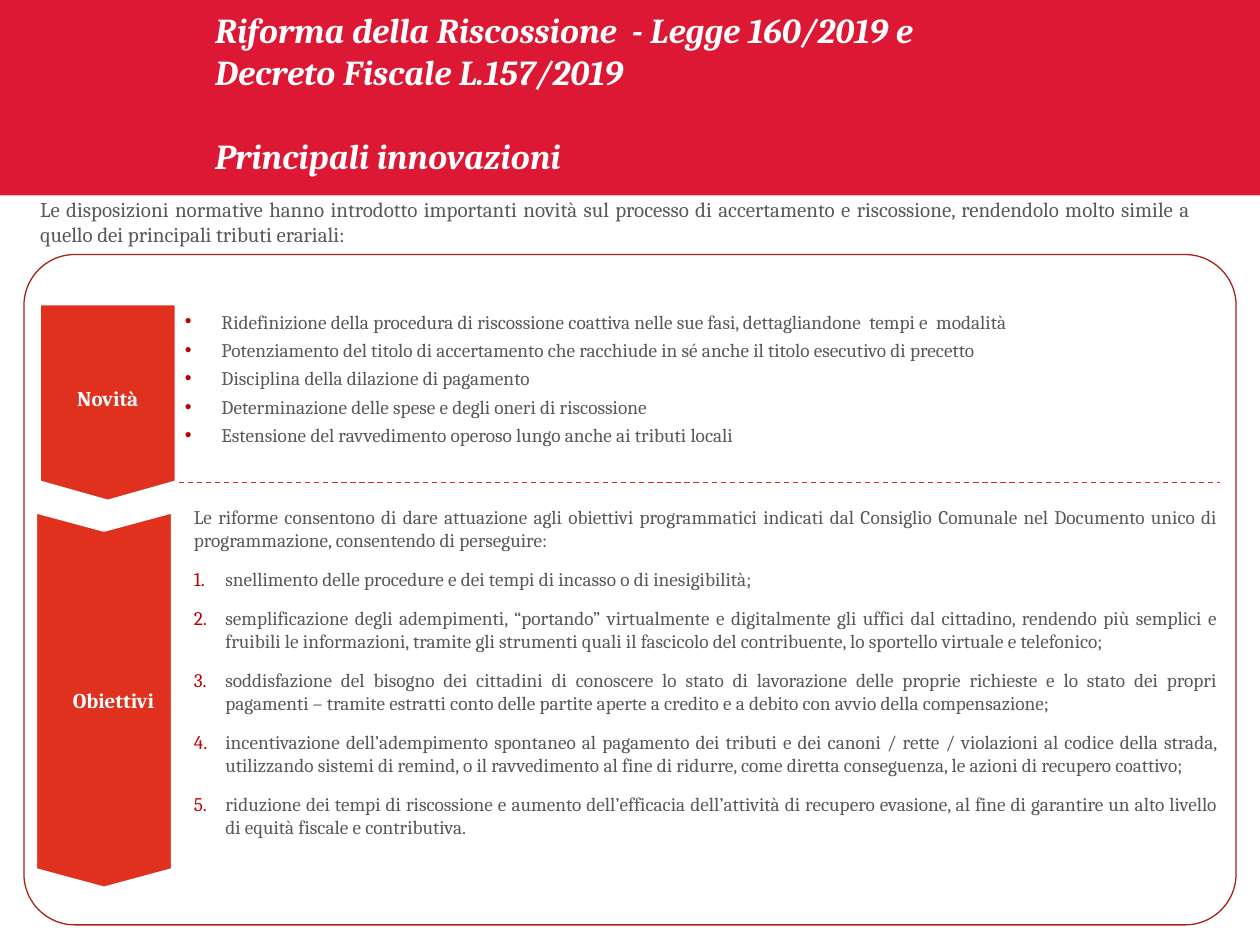
from pptx import Presentation
from pptx.dml.color import RGBColor
from pptx.enum import dml, shapes, text
from pptx.util import Inches, Pt
from lxml import etree

COLORS = {"banner": "DD1835", "arrow": "E0301E", "frame": "A62416", "divider": "E02B19",
          "marker": "C00000", "body": "595959", "white": "FFFFFF"}
FONT = "Cambria"
NS = "http://schemas.openxmlformats.org/drawingml/2006/main"
SHAPE = shapes.MSO_SHAPE
ALIGN = text.PP_ALIGN
ANCHOR = text.MSO_ANCHOR

TITLE = ["Riforma della Riscossione  - Legge 160/2019 e Decreto Fiscale L.157/2019",
         "Principali innovazioni"]
INTRO = ("Le disposizioni normative hanno introdotto importanti novità sul processo di accertamento "
         "e riscossione, rendendolo molto simile a quello dei principali tributi erariali:")
NEWS = [
    "Ridefinizione della procedura di riscossione coattiva nelle sue fasi, dettagliandone  tempi e  modalità",
    "Potenziamento del titolo di accertamento che racchiude in sé anche il titolo esecutivo di precetto",
    "Disciplina della dilazione di pagamento",
    "Determinazione delle spese e degli oneri di riscossione",
    "Estensione del ravvedimento operoso lungo anche ai tributi locali",
]
GOALS_LEAD = ("Le riforme consentono di dare attuazione agli obiettivi programmatici indicati dal "
              "Consiglio Comunale nel Documento unico di programmazione, consentendo di perseguire:")
GOALS = [
    "snellimento delle procedure e dei tempi di incasso o di inesigibilità;",
    "semplificazione degli adempimenti, “portando” virtualmente e digitalmente gli uffici dal cittadino, "
    "rendendo più semplici e fruibili le informazioni, tramite gli strumenti quali il fascicolo del "
    "contribuente, lo sportello virtuale e telefonico;",
    "soddisfazione del bisogno dei cittadini di conoscere lo stato di lavorazione delle proprie richieste "
    "e lo stato dei propri pagamenti – tramite estratti conto delle partite aperte a credito e a debito "
    "con avvio della compensazione;",
    "incentivazione dell’adempimento spontaneo al pagamento dei tributi e dei canoni / rette / violazioni "
    "al codice della strada, utilizzando sistemi di remind, o il ravvedimento al fine di ridurre, come "
    "diretta conseguenza, le azioni di recupero coattivo;",
    "riduzione dei tempi di riscossione e aumento dell’efficacia dell’attività di recupero evasione, al "
    "fine di garantire un alto livello di equità fiscale e contributiva.",
]


def rgb(name):
    """Return the palette colour of that name."""
    return RGBColor.from_string(COLORS[name])


def set_marker(paragraph, indent, hanging, bullet=None):
    """Indent a paragraph and give it a bullet or, without one, a number."""
    props = paragraph._p.get_or_add_pPr()
    props.set("marL", str(Inches(indent)))
    props.set("indent", str(-Inches(hanging)))
    colour = etree.SubElement(props, f"{{{NS}}}buClr")
    etree.SubElement(colour, f"{{{NS}}}srgbClr", val=COLORS["marker"])
    face = "Arial" if bullet else "+mj-lt"
    etree.SubElement(props, f"{{{NS}}}buFont", typeface=face)
    if bullet:
        etree.SubElement(props, f"{{{NS}}}buChar", char=bullet)
    else:
        etree.SubElement(props, f"{{{NS}}}buAutoNum", type="arabicPeriod")


def write(frame, lines, size=11, color="body", bold=False, italic=False, align=ALIGN.JUSTIFY,
          anchor=ANCHOR.TOP, before=0, after=0):
    """Fill a text frame with formatted paragraphs and return them."""
    frame.word_wrap = True
    frame.vertical_anchor = anchor
    for i, line in enumerate(lines):
        paragraph = frame.add_paragraph() if i else frame.paragraphs[0]
        paragraph.alignment = align
        paragraph.space_before = Pt(before if i else 0)
        paragraph.space_after = Pt(after)
        run = paragraph.add_run()
        run.text = line
        run.font.name, run.font.size = FONT, Pt(size)
        run.font.bold, run.font.italic = bold, italic
        run.font.color.rgb = rgb(color)
    return frame.paragraphs


def add_text(slide, box, lines, **style):
    """Place a text box and return its paragraphs."""
    return write(slide.shapes.add_textbox(*map(Inches, box)).text_frame, lines, **style)


def add_shape(slide, kind, box, fill=None, line=None, width=1):
    """Place a preset shape with the given fill and outline."""
    shape = slide.shapes.add_shape(kind, *map(Inches, box))
    shape.shadow.inherit = False
    if fill:
        shape.fill.solid()
        shape.fill.fore_color.rgb = rgb(fill)
    else:
        shape.fill.background()
    if line:
        shape.line.color.rgb = rgb(line)
        shape.line.width = Pt(width)
    else:
        shape.line.fill.background()
    return shape


def add_header(slide, box):
    """Draw the banner with the title at its foot."""
    left, top, width, height = box
    add_shape(slide, SHAPE.RECTANGLE, box, fill="banner")
    add_text(slide, (left + 1.61, top + height - 0.58, 6.61, 0.48), TITLE, size=20, color="white",
             bold=True, italic=True, align=ALIGN.LEFT, anchor=ANCHOR.BOTTOM, before=24)


def add_intro(slide, box):
    """Write the indented opening sentence."""
    sentence, = add_text(slide, box, [INTRO], size=12, after=6)
    sentence._p.get_or_add_pPr().set("marL", str(Inches(0.2)))


def add_label(slide, kind, box, label, point, lift=0):
    """Draw a downward arrow with an upright label, in its upright box."""
    left, top, width, height = box
    shift = (height - width) / 2
    arrow = add_shape(slide, kind, (left - shift, top + shift, height, width),
                      fill="arrow", line="white", width=2)
    arrow.rotation = 90
    arrow.adjustments[0] = point
    frame = arrow.text_frame
    write(frame, [label], size=12, color="white", bold=True, align=ALIGN.CENTER, anchor=ANCHOR.MIDDLE)
    frame._txBody.bodyPr.set("vert", "vert270")
    frame.margin_bottom = Inches(0.05 + lift)


def add_divider(slide, left, right, y):
    """Draw the dashed rule between the two sections."""
    rule = slide.shapes.add_connector(shapes.MSO_CONNECTOR.STRAIGHT, Inches(left), Inches(y),
                                      Inches(right), Inches(y))
    rule.line.color.rgb = rgb("divider")
    rule.line.width = Pt(0.75)
    rule.line.dash_style = dml.MSO_LINE.DASH
    etree.SubElement(rule._element.spPr, f"{{{NS}}}effectLst")


def add_panel(slide, box):
    """Draw the framed panel with the news and the goals."""
    left, top, width, height = box
    add_label(slide, SHAPE.PENTAGON, (left + 0.12, top + 0.39, 1.09, 1.57), "Novità", 0.141)
    add_label(slide, SHAPE.CHEVRON, (left + 0.09, top + 2.04, 1.09, 2.99), "Obiettivi", 0.135, lift=0.2)
    for item in add_text(slide, (left + 1.17, top + 0.39, 8.33, 1.19), NEWS, before=3):
        set_marker(item, 0.3, 0.29, bullet="•")
    goals = add_text(slide, (left + 1.25, top + 1.94, 8.33, 3.14), [GOALS_LEAD, *GOALS],
                     before=3, after=6)
    for goal in goals[1:]:
        set_marker(goal, 0.25, 0.25)
    frame = add_shape(slide, SHAPE.ROUNDED_RECTANGLE, box, line="frame", width=0.75)
    frame.adjustments[0] = 0.076
    add_divider(slide, left + 1.23, left + width - 0.13, top + 1.81)


def main():
    """Build and save the slide."""
    deck = Presentation()
    deck.slide_width, deck.slide_height = Inches(10), Inches(7.5)
    slide = deck.slides.add_slide(deck.slide_layouts[6])
    add_header(slide, (0, 0, 10, 1.55))
    add_intro(slide, (0.02, 1.51, 9.53, 0.5))
    add_panel(slide, (0.19, 2.02, 9.62, 5.32))
    deck.save("out.pptx")


if __name__ == "__main__":
    main()
